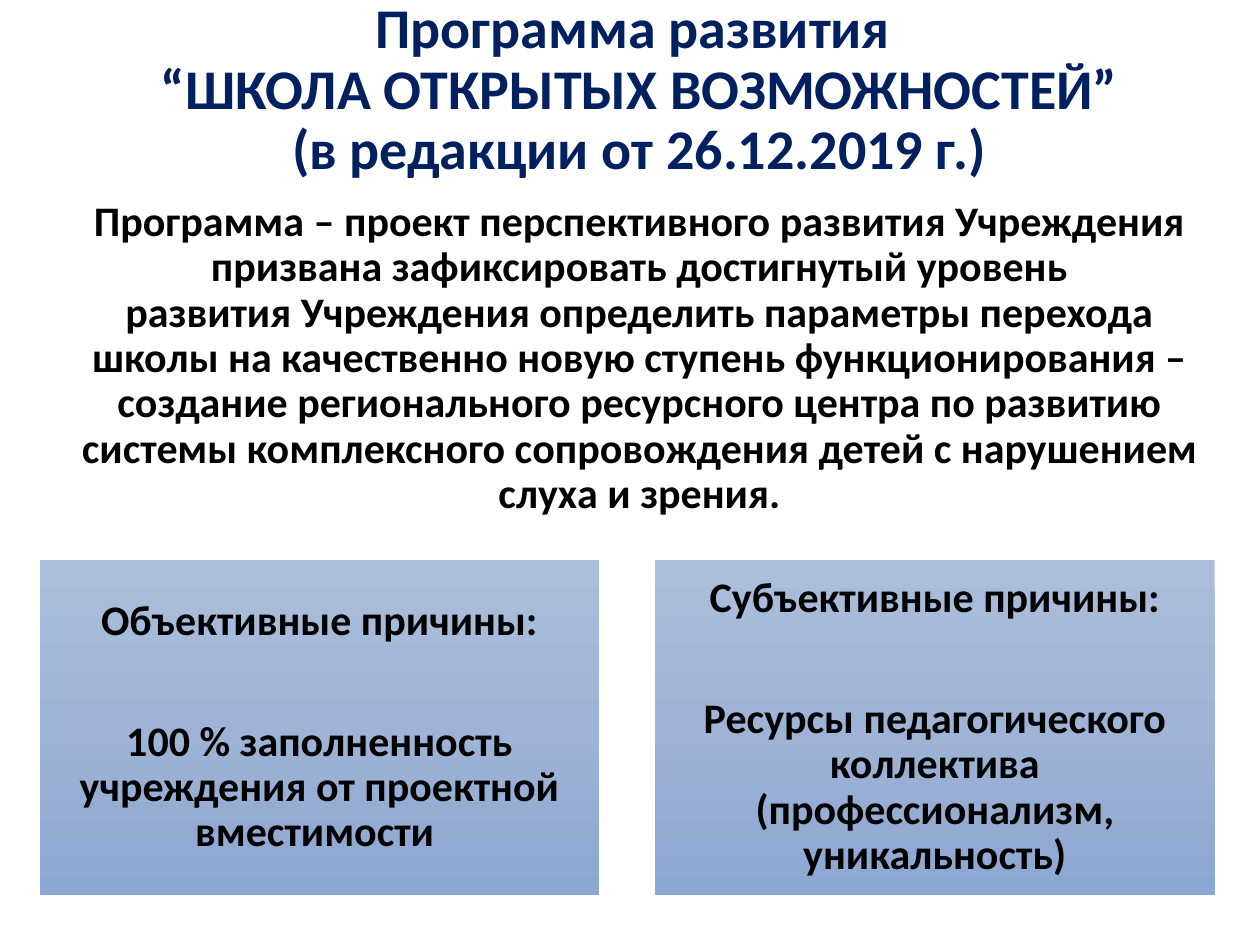
from copy import deepcopy
from pptx import Presentation
from pptx.dml.color import RGBColor
from pptx.enum.shapes import MSO_SHAPE
from pptx.enum.text import MSO_ANCHOR, MSO_AUTO_SIZE, PP_ALIGN
from pptx.oxml.ns import qn
from pptx.util import Pt

NBSP = chr(160)
TITLE = "Программа развития \v“ШКОЛА ОТКРЫТЫХ ВОЗМОЖНОСТЕЙ”\v(в редакции от 26.12.2019 г.)"
BODY = (
    "Программа – проект перспективного развития Учреждения призвана "
    f"зафиксировать достигнутый уровень развития{NBSP}Учреждения определить "
    "параметры перехода школы на качественно новую ступень функционирования – "
    "создание регионального ресурсного центра по развитию системы комплексного "
    "сопровождения детей с нарушением слуха и зрения."
)
REASONS = [
    ("Объективные причины:", "100 % заполненность учреждения от проектной вместимости "),
    ("Субъективные причины:",
     "Ресурсы педагогического коллектива (профессионализм, уникальность)"),
]
COLORS = {"title": "002060", "text": "000000"}
GRADIENT = [(0, "ABBEDB"), (0.5, "9EB3D5"), (1, "8CA7D2")]

TITLE_BOX = (10.8, 18.7, 709.2, 104.4)
BODY_BOX = (36.7, 110.9, 657.4, 262.8)
CARD_LEFT, CARD_TOP, CARD_W, CARD_H, CARD_GAP = 22.7, 320, 319.7, 191.5, 32
CARD_INSET, HEADING_GAP = 7.2, 43


def write(tf, texts, size, color, anchor, before=0, gap=0):
    frame = {"word_wrap": True, "auto_size": MSO_AUTO_SIZE.NONE, "vertical_anchor": anchor}
    for name, value in frame.items():
        setattr(tf, name, value)
    for i, text in enumerate(texts):
        p = tf.paragraphs[0] if i == 0 else tf.add_paragraph()
        p.text = text
        spacing = {
            "alignment": PP_ALIGN.CENTER,
            "line_spacing": 0.9,
            "space_before": Pt(before),
            "space_after": Pt(gap if i < len(texts) - 1 else 0),
        }
        for name, value in spacing.items():
            setattr(p, name, value)
        for r in p.runs:
            for name, value in {"name": "Calibri", "size": Pt(size), "bold": True}.items():
                setattr(r.font, name, value)
            r.font.color.rgb = RGBColor.from_string(COLORS[color])


def fill_gradient(sp):
    sp.fill.gradient()
    sp.fill.gradient_angle = 270
    stops = sp._element.spPr.find(qn("a:gradFill")).find(qn("a:gsLst"))
    stops.insert(1, deepcopy(stops[0]))
    for stop, (position, color) in zip(sp.fill.gradient_stops, GRADIENT):
        stop.position = position
        stop.color.rgb = RGBColor.from_string(color)


prs = Presentation()
prs.slide_width, prs.slide_height = Pt(720), Pt(540)
s = prs.slides.add_slide(prs.slide_layouts[5])

title = s.shapes.title
for name, value in zip(("left", "top", "width", "height"), TITLE_BOX):
    setattr(title, name, Pt(value))
title.text_frame.margin_bottom = Pt(41.5)
write(title.text_frame, [TITLE], 32, "title", MSO_ANCHOR.MIDDLE)

body = s.shapes.add_textbox(*map(Pt, BODY_BOX))
write(body.text_frame, [BODY], 24, "text", MSO_ANCHOR.TOP, before=10)

for i, texts in enumerate(REASONS):
    left = CARD_LEFT + i * (CARD_W + CARD_GAP)
    sp = s.shapes.add_shape(
        MSO_SHAPE.RECTANGLE, Pt(left), Pt(CARD_TOP), Pt(CARD_W), Pt(CARD_H))
    sp.shadow.inherit = False
    sp.line.fill.background()
    fill_gradient(sp)
    for side in ("left", "top", "right", "bottom"):
        setattr(sp.text_frame, f"margin_{side}", Pt(CARD_INSET))
    write(sp.text_frame, texts, 24, "text", MSO_ANCHOR.MIDDLE, gap=HEADING_GAP)

prs.save("out.pptx")
